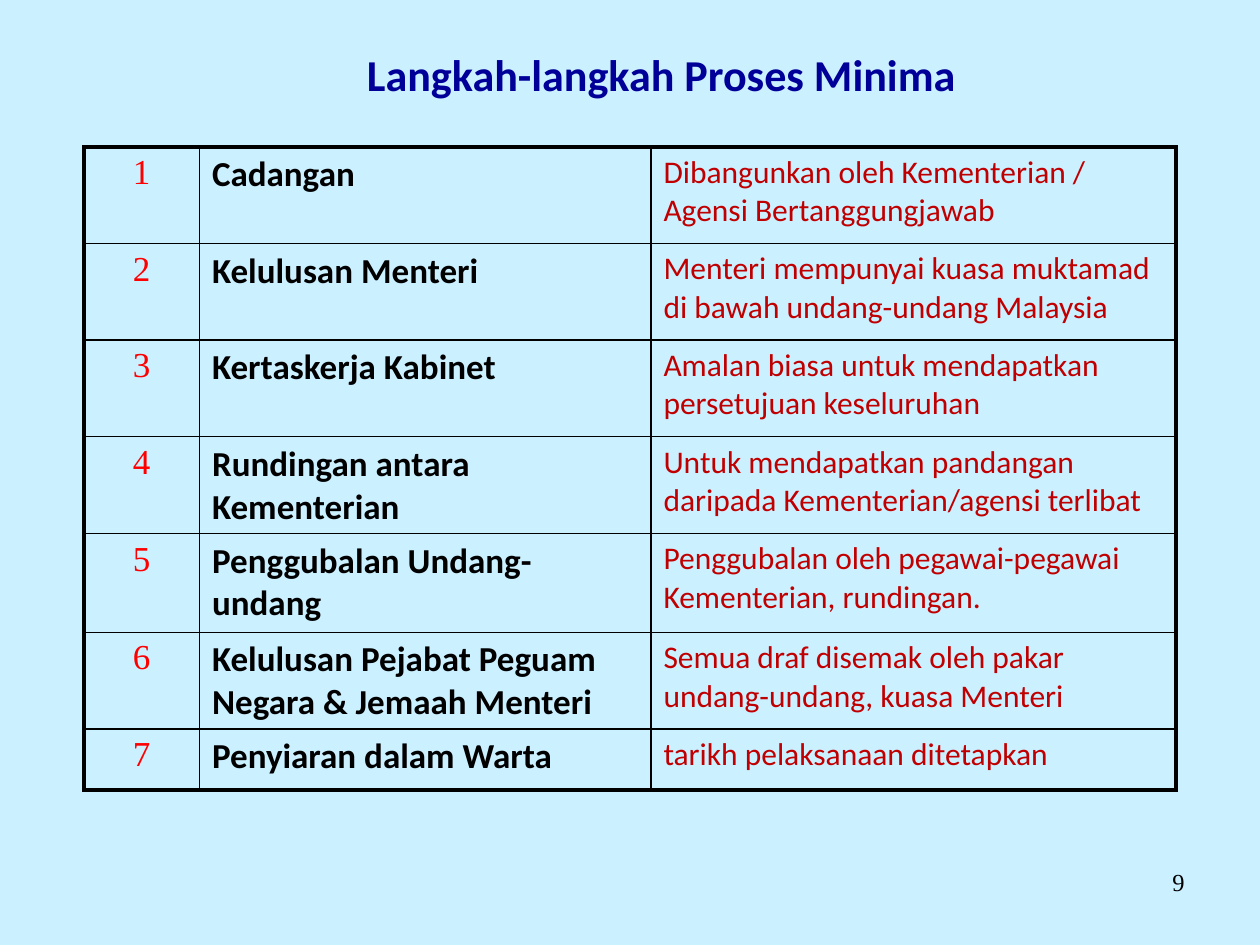
from dataclasses import dataclass

from lxml.etree import SubElement
from pptx import Presentation
from pptx.dml.color import RGBColor as RGB
from pptx.enum.text import MSO_ANCHOR as Anchor, PP_ALIGN as Align
from pptx.oxml.ns import qn
from pptx.util import Pt


@dataclass(frozen=True)
class Theme:
    background: str = "CBF0FF"
    title: str = "000099"
    ink: str = "000000"
    number: str = "FF0000"
    note: str = "C00000"
    sans: str = "Calibri"
    serif: str = "Times New Roman"
    title_size: float = 25.2
    step_size: float = 20
    note_size: float = 18
    page_size: float = 14
    outer_line: float = 2.25
    inner_line: float = 1


T = Theme()

TITLE = "Langkah-langkah Proses Minima"
PAGE = "9"
STEPS = [
    ("Cadangan", "Dibangunkan oleh Kementerian / Agensi Bertanggungjawab"),
    ("Kelulusan Menteri",
     "Menteri mempunyai kuasa muktamad di bawah undang-undang Malaysia"),
    ("Kertaskerja Kabinet",
     "Amalan biasa untuk mendapatkan persetujuan keseluruhan"),
    ("Rundingan antara Kementerian",
     "Untuk mendapatkan pandangan daripada Kementerian/agensi terlibat"),
    ("Penggubalan Undang-undang",
     "Penggubalan oleh pegawai-pegawai Kementerian, rundingan."),
    ("Kelulusan Pejabat Peguam Negara & Jemaah Menteri",
     "Semua draf disemak oleh pakar undang-undang, kuasa Menteri"),
    ("Penyiaran dalam Warta", "tarikh pelaksanaan ditetapkan"),
]

TABLE_LEFT, TABLE_TOP = 48, 84
COLUMN_WIDTHS = [66, 258, 300]
ROW_HEIGHTS = [55.2] * 4 + [56.5, 55.2, 34.8]
# alignment, size, font, colour, bold
COLUMN_STYLES = [
    (Align.CENTER, T.step_size, T.serif, T.number, False),
    (Align.LEFT, T.step_size, T.sans, T.ink, True),
    (Align.LEFT, T.note_size, T.sans, T.note, False),
]


def write(tf, text, align, size, font, color, bold=False):
    tf.word_wrap = True
    p = tf.paragraphs[0]
    p.alignment = align
    r = p.add_run()
    r.text = text
    r.font.size = Pt(size)
    r.font.name = font
    r.font.bold = bold
    r.font.color.rgb = RGB.from_string(color)


def add_text(slide, box, anchor, *style):
    tf = slide.shapes.add_textbox(*map(Pt, box)).text_frame
    tf.vertical_anchor = anchor
    write(tf, *style)


def set_borders(cell, outer_sides):
    """Draw all four sides, heavier where the side is on the table's edge."""
    tcPr = cell._tc.get_or_add_tcPr()
    for side in "LRTB":
        width = T.outer_line if side in outer_sides else T.inner_line
        ln = SubElement(tcPr, qn(f"a:ln{side}"), w=str(Pt(width)))
        fill = SubElement(ln, qn("a:solidFill"))
        SubElement(fill, qn("a:srgbClr"), val=T.ink)


def add_steps_table(slide):
    n_rows, n_cols = len(STEPS), len(COLUMN_WIDTHS)
    table = slide.shapes.add_table(
        n_rows, n_cols, Pt(TABLE_LEFT), Pt(TABLE_TOP),
        Pt(sum(COLUMN_WIDTHS)), Pt(sum(ROW_HEIGHTS))).table
    table.first_row = table.horz_banding = False
    for column, width in zip(table.columns, COLUMN_WIDTHS):
        column.width = Pt(width)
    for row, height in zip(table.rows, ROW_HEIGHTS):
        row.height = Pt(height)
    for i, step in enumerate(STEPS):
        for j, text in enumerate((str(i + 1), *step)):
            cell = table.cell(i, j)
            edges = {"T": i == 0, "B": i == n_rows - 1,
                     "L": j == 0, "R": j == n_cols - 1}
            set_borders(cell, [side for side, on in edges.items() if on])
            cell.fill.background()
            write(cell.text_frame, text, *COLUMN_STYLES[j])


def main():
    prs = Presentation()
    prs.slide_width, prs.slide_height = Pt(720), Pt(540)
    slide = prs.slides.add_slide(prs.slide_layouts[6])
    bg = slide.background.fill
    bg.solid()
    bg.fore_color.rgb = RGB.from_string(T.background)

    add_text(slide, (198, 18, 360, 48), Anchor.MIDDLE, TITLE,
             Align.CENTER, T.title_size, T.sans, T.title, True)
    add_steps_table(slide)
    add_text(slide, (516, 492, 168, 37.5), Anchor.TOP, PAGE,
             Align.RIGHT, T.page_size, T.serif, T.ink)
    prs.save("out.pptx")


if __name__ == "__main__":
    main()
